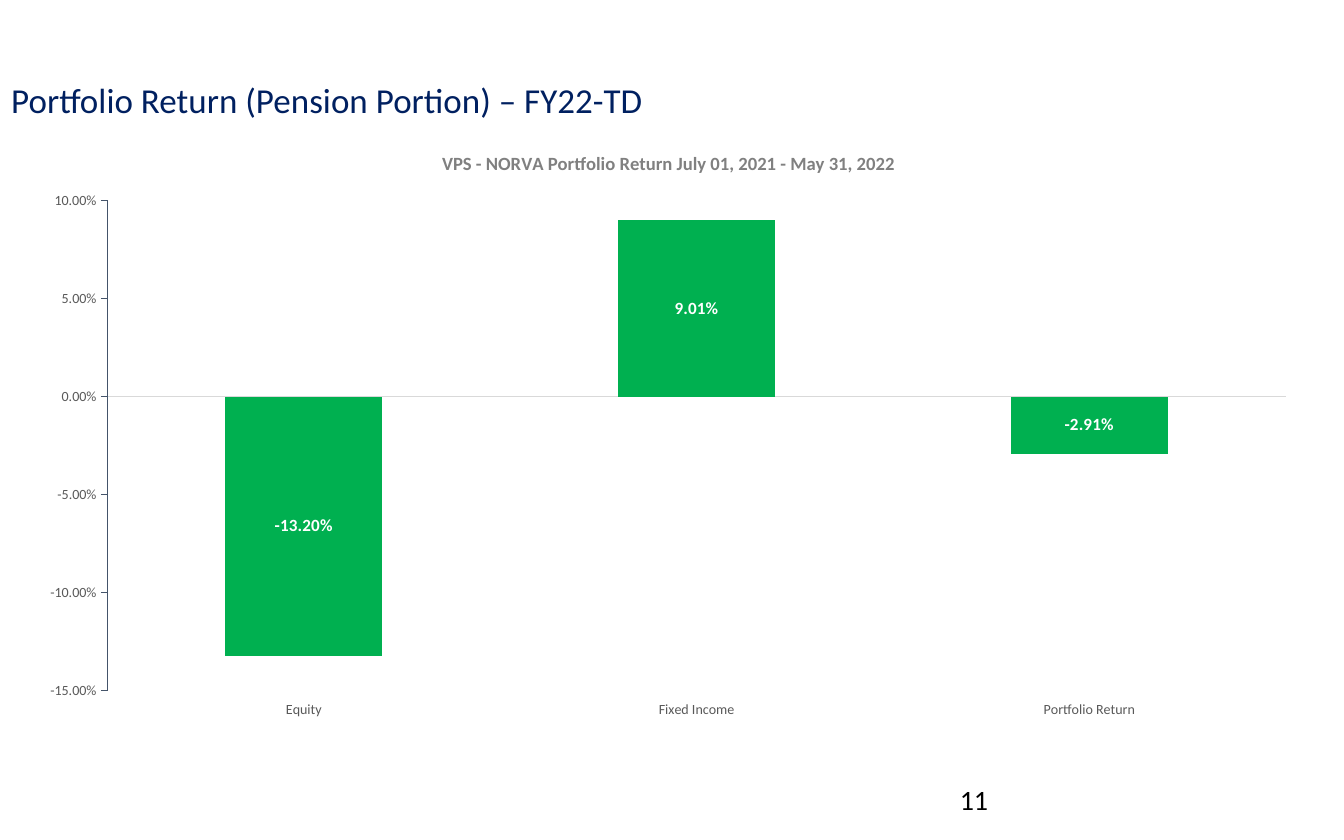
from dataclasses import dataclass

from lxml import etree
from pptx import Presentation
from pptx.chart.axis import _BaseAxis
from pptx.chart.chart import Chart
from pptx.chart.data import CategoryChartData
from pptx.dml.color import RGBColor
from pptx.enum.chart import (
    XL_CHART_TYPE, XL_LABEL_POSITION, XL_TICK_LABEL_POSITION, XL_TICK_MARK)
from pptx.enum.text import MSO_ANCHOR
from pptx.oxml.ns import qn
from pptx.slide import Slide
from pptx.util import Inches, Pt

COLUMN_STACKED = XL_CHART_TYPE.COLUMN_STACKED
LABEL_CENTER = XL_LABEL_POSITION.CENTER
LABELS_LOW = XL_TICK_LABEL_POSITION.LOW
TICK_NONE, TICK_OUTSIDE = XL_TICK_MARK.NONE, XL_TICK_MARK.OUTSIDE
ANCHOR_TOP, ANCHOR_MIDDLE = MSO_ANCHOR.TOP, MSO_ANCHOR.MIDDLE


@dataclass(frozen=True)
class TextStyle:
    size: float
    color: str
    bold: bool = False


@dataclass(frozen=True)
class Theme:
    font: str = "Calibri"
    heading: TextStyle = TextStyle(22.5, "002060")
    page_number: TextStyle = TextStyle(18, "000000")
    chart_base: TextStyle = TextStyle(10, "000000")
    chart_title: TextStyle = TextStyle(12, "808080", True)
    axis: TextStyle = TextStyle(9, "595959")
    data_label: TextStyle = TextStyle(11, "FFFFFF", True)
    bar: str = "00B050"
    category_line: str = "D9D9D9"
    value_line: str = "44546A"


@dataclass(frozen=True)
class Box:
    left: float
    top: float
    width: float
    height: float


@dataclass(frozen=True)
class Label:
    text: str
    box: Box
    style: TextStyle
    anchor: MSO_ANCHOR


THEME = Theme()
PERCENT = "0.00%"
CHART_BOX = Box(0.22, 1.16, 11.5, 5.37)
PLOT_BOX = Box(0.74, 0.63, 10.52, 4.38)  # relative to the chart
CHART_TITLE = "VPS - NORVA Portfolio Return July 01, 2021 - May 31, 2022"
RETURNS = {"Equity": -0.132, "Fixed Income": 0.0901, "Portfolio Return": -0.0291}
LABELS = (
    Label("11", Box(8.48, 6.95, 2.7, 0.4), THEME.page_number, ANCHOR_TOP),
    Label("Portfolio Return (Pension Portion) – FY22-TD",
          Box(0.01, 0.62, 9, 0.54), THEME.heading, ANCHOR_MIDDLE),
)


def set_attributes(target: object, values: dict) -> None:
    for name, value in values.items():
        setattr(target, name, value)


def apply_style(font: object, style: TextStyle) -> None:
    set_attributes(font, {
        "name": THEME.font, "size": Pt(style.size), "bold": style.bold})
    font.color.rgb = RGBColor.from_string(style.color)


def add_label(slide: Slide, label: Label) -> None:
    box = label.box
    shape = slide.shapes.add_textbox(
        Inches(box.left), Inches(box.top), Inches(box.width), Inches(box.height))
    frame = shape.text_frame
    set_attributes(frame, {
        "word_wrap": True, "vertical_anchor": label.anchor,
        "margin_left": Inches(0.09), "margin_right": Inches(0.09),
        "margin_top": Inches(0.04), "margin_bottom": Inches(0.04)})
    run = frame.paragraphs[0].add_run()
    run.text = label.text
    apply_style(run.font, label.style)


def format_axis(axis: _BaseAxis, line_color: str, values: dict) -> None:
    set_attributes(axis, {
        "has_major_gridlines": False, "minor_tick_mark": TICK_NONE,
        "tick_label_position": LABELS_LOW, **values})
    apply_style(axis.tick_labels.font, THEME.axis)
    axis.format.line.color.rgb = RGBColor.from_string(line_color)
    axis.format.line.width = Pt(0.75)


def place_plot(chart: Chart) -> None:
    """Fix the inner plot area as fractions of the chart size."""
    plot_area = chart.element.find(f".//{qn('c:plotArea')}")
    for old_layout in plot_area.findall(qn("c:layout")):
        plot_area.remove(old_layout)
    layout = etree.Element(qn("c:layout"))
    plot_area.insert(0, layout)
    manual = etree.SubElement(layout, qn("c:manualLayout"))
    settings = {
        "layoutTarget": "inner", "xMode": "edge", "yMode": "edge",
        "x": PLOT_BOX.left / CHART_BOX.width,
        "y": PLOT_BOX.top / CHART_BOX.height,
        "w": PLOT_BOX.width / CHART_BOX.width,
        "h": PLOT_BOX.height / CHART_BOX.height}
    for name, value in settings.items():
        etree.SubElement(manual, qn(f"c:{name}")).set("val", str(value))


def add_return_chart(slide: Slide) -> None:
    data = CategoryChartData(number_format=PERCENT)
    data.categories = list(RETURNS)
    data.add_series("Series 1", list(RETURNS.values()))
    chart = slide.shapes.add_chart(
        COLUMN_STACKED, Inches(CHART_BOX.left), Inches(CHART_BOX.top),
        Inches(CHART_BOX.width), Inches(CHART_BOX.height), data).chart
    apply_style(chart.font, THEME.chart_base)
    chart.has_legend = False

    title = chart.chart_title
    title.include_in_layout = False
    title.text_frame.text = CHART_TITLE
    apply_style(title.text_frame.paragraphs[0].runs[0].font, THEME.chart_title)

    format_axis(chart.category_axis, THEME.category_line,
                {"major_tick_mark": TICK_NONE})
    format_axis(chart.value_axis, THEME.value_line, {
        "major_tick_mark": TICK_OUTSIDE, "minimum_scale": -0.15,
        "maximum_scale": 0.1, "major_unit": 0.05})
    number_format = {"number_format": PERCENT, "number_format_is_linked": False}
    set_attributes(chart.value_axis.tick_labels, number_format)

    plot = chart.plots[0]
    set_attributes(plot, {
        "gap_width": 150, "overlap": 100, "vary_by_categories": False})
    series = plot.series[0]
    series.invert_if_negative = False
    series.format.fill.solid()
    series.format.fill.fore_color.rgb = RGBColor.from_string(THEME.bar)
    set_attributes(series.data_labels, {
        "show_value": True, "position": LABEL_CENTER, **number_format})
    apply_style(series.data_labels.font, THEME.data_label)
    place_plot(chart)


def main() -> None:
    presentation = Presentation()
    presentation.slide_width = Inches(12)
    presentation.slide_height = Inches(7.5)
    slide = presentation.slides.add_slide(presentation.slide_layouts[6])
    for label in LABELS:
        add_label(slide, label)
    add_return_chart(slide)
    presentation.save("out.pptx")


if __name__ == "__main__":
    main()
